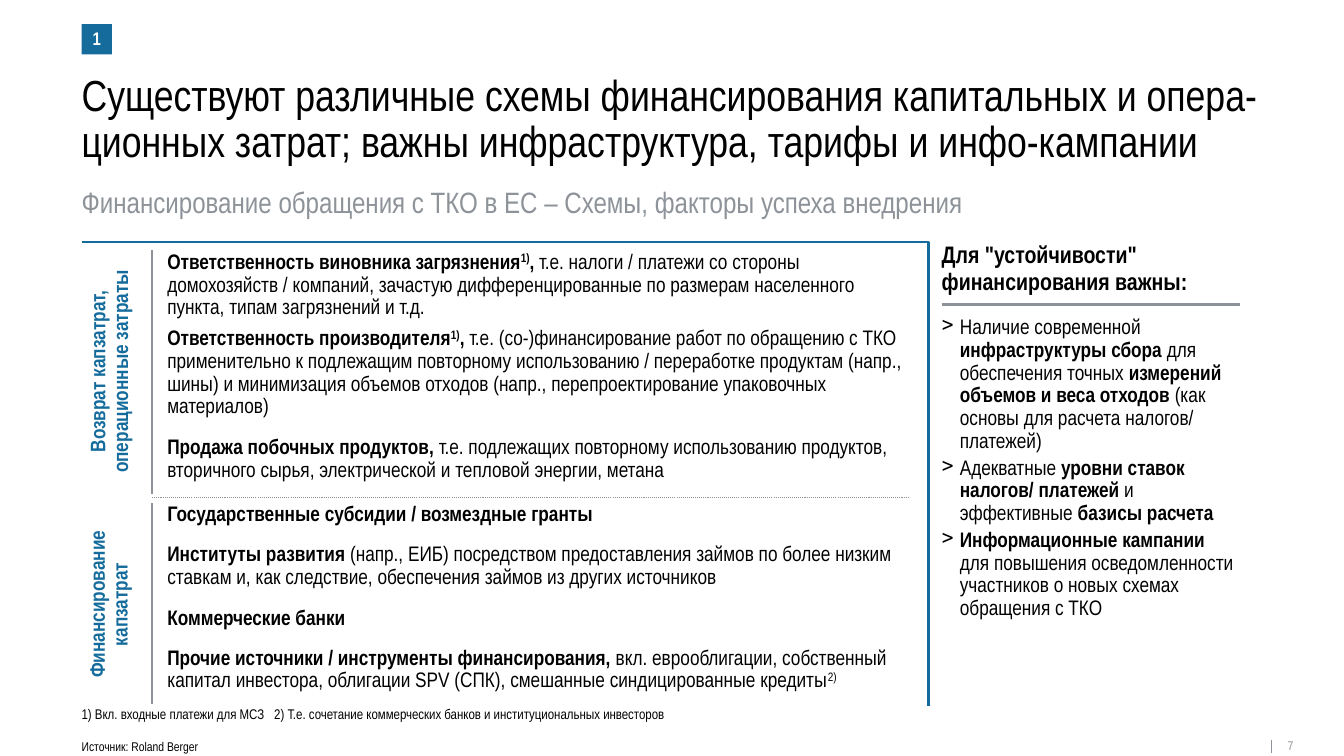
"""Build the slide on financing schemes for municipal waste management."""
from dataclasses import dataclass
from typing import NamedTuple

from lxml import etree
from pptx import Presentation
from pptx.dml.color import RGBColor
from pptx.enum.dml import MSO_LINE
from pptx.enum.shapes import MSO_CONNECTOR, MSO_SHAPE
from pptx.enum.text import MSO_ANCHOR, PP_ALIGN
from pptx.oxml.ns import qn
from pptx.util import Inches, Pt

FONT = "Arial Narrow"
BLACK = RGBColor(0x00, 0x00, 0x00)
WHITE = RGBColor(0xFF, 0xFF, 0xFF)
BLUE = RGBColor(0x15, 0x6C, 0x9C)
GREY = RGBColor(0x8D, 0x93, 0x99)
TOP, MIDDLE, BOTTOM = MSO_ANCHOR.TOP, MSO_ANCHOR.MIDDLE, MSO_ANCHOR.BOTTOM
LEFT, CENTER = PP_ALIGN.LEFT, PP_ALIGN.CENTER
STRAIGHT, RECTANGLE = MSO_CONNECTOR.STRAIGHT, MSO_SHAPE.RECTANGLE
DOTTED = MSO_LINE.ROUND_DOT

MARGIN = 0.81
SCHEME_LEFT, SCHEME_WIDTH = 1.66, 7.4
SIDE_LEFT, SIDE_WIDTH = 9.34, 2.95
BULLET_INDENT = 0.18


class Span(NamedTuple):
    text: str
    bold: bool = False
    raised: bool = False


@dataclass(frozen=True)
class Style:
    size: float
    color: RGBColor = BLACK
    align: PP_ALIGN = LEFT
    anchor: MSO_ANCHOR = TOP
    spacing: float = 0.9
    bullet: str = ""
    tab: float = 0
    wrap: bool = True
    inset_top: float = 0
    inset_bottom: float = 0


@dataclass(frozen=True)
class Label:
    left: float
    top: float
    width: float
    height: float
    style: Style
    paras: list[list[Span]]
    rotation: float = 0


@dataclass(frozen=True)
class Rule:
    start: tuple[float, float]
    end: tuple[float, float]
    width: float = 1.75
    dash: MSO_LINE | None = None


BODY = Style(15, anchor=MIDDLE)
SIDE_HEAD = Style(17, anchor=BOTTOM, spacing=0.93, inset_bottom=0.08)
SIDE_LIST = Style(15, bullet=">", inset_top=0.12)
GROUP = Style(15, BLUE, CENTER)
BADGE = Style(13, WHITE, CENTER, MIDDLE, wrap=False)


def scheme(top: float, height: float, *spans: Span) -> Label:
    """Describe one financing scheme in the main column."""
    return Label(SCHEME_LEFT, top, SCHEME_WIDTH, height, BODY, [list(spans)])


LABELS = [
    Label(MARGIN, 0.73, 11.8, 0.94, Style(31), [[Span(
        "Существуют различные схемы финансирования капитальных и опера-ционных затрат; "
        "важны инфраструктура, тарифы и инфо-кампании")]]),
    Label(MARGIN, 1.87, 11.8, 0.33, Style(21, GREY), [[Span(
        "Финансирование обращения с ТКО в ЕС – Схемы, факторы успеха внедрения")]]),
    scheme(2.48, 0.7,
           Span("Ответственность виновника загрязнения", True), Span("1)", True, True),
           Span(", ", True),
           Span("т.е. налоги / платежи со стороны домохозяйств / компаний, зачастую "
                "дифференцированные по размерам населенного пункта, типам загрязнений и т.д.")),
    scheme(3.23, 0.94,
           Span("Ответственность производителя", True), Span("1)", True, True),
           Span(", ", True),
           Span("т.е. (со-)финансирование работ по обращению с ТКО применительно к подлежащим "
                "повторному использованию / переработке продуктам (напр., шины) и минимизация "
                "объемов отходов (напр., перепроектирование упаковочных материалов)")),
    scheme(4.33, 0.45,
           Span("Продажа побочных продуктов, ", True),
           Span("т.е. подлежащих повторному использованию продуктов, вторичного сырья, "
                "электрической и тепловой энергии, метана")),
    scheme(4.99, 0.23, Span("Государственные субсидии / возмездные гранты", True)),
    scheme(5.39, 0.45,
           Span("Институты развития", True),
           Span(" (напр., ЕИБ) посредством предоставления займов по более низким ставкам и, "
                "как следствие, обеспечения займов из других источников")),
    scheme(6.02, 0.23, Span("Коммерческие банки", True)),
    scheme(6.42, 0.45,
           Span("Прочие источники / инструменты финансирования, ", True),
           Span("вкл. еврооблигации, собственный капитал инвестора, облигации SPV (СПК), "
                "смешанные синдицированные кредиты"),
           Span("2)", raised=True)),
    Label(-0.12, 3.46, 2.42, 0.45, GROUP,
          [[Span("Возврат капзатрат, операционные затраты", True)]], 270),
    Label(0.08, 5.77, 2.01, 0.45, GROUP, [[Span("Финансирование капзатрат", True)]], 270),
    Label(SIDE_LEFT, 2.4, SIDE_WIDTH, 0.61, SIDE_HEAD,
          [[Span('Для "устойчивости" финансирования важны:', True)]]),
    Label(SIDE_LEFT, 3.02, SIDE_WIDTH, 3.16, SIDE_LIST, [
        [Span("Наличие современной "), Span("инфраструктуры сбора ", True),
         Span("для обеспечения точных "), Span("измерений объемов и веса отходов ", True),
         Span("(как основы для расчета налогов/ платежей)")],
        [Span("Адекватные "), Span("уровни ставок налогов/ платежей", True),
         Span(" и эффективные "), Span("базисы расчета", True)],
        [Span("Информационные кампании ", True),
         Span("для повышения осведомленности участников о новых схемах обращения с ТКО")]]),
    Label(MARGIN, 7.02, 6.2, 0.15, Style(10, anchor=BOTTOM, tab=1.91), [[Span(
        "1) Вкл. входные платежи для МСЗ\t"
        "2) Т.е. сочетание коммерческих банков и институциональных инвесторов")]]),
    Label(MARGIN, 7.34, 1.17, 0.14, Style(9, anchor=BOTTOM, wrap=False),
          [[Span("Источник: Roland Berger")]]),
    Label(12.77, 7.34, 0.13, 0.14, Style(9, GREY, wrap=False), [[Span("7")]]),
]

RULES = [
    Rule((1.51, 2.48), (1.51, 4.9)),
    Rule((1.51, 4.99), (1.51, 6.98)),
    Rule((1.51, 4.94), (9.01, 4.94), 0.75, DOTTED),
    Rule((SIDE_LEFT, 3.02), (12.3, 3.02)),
    Rule((12.61, 7.34), (12.61, 7.47), 0.75),
]


def write_text(box, style: Style, paras: list[list[Span]]) -> None:
    """Fill a shape with formatted paragraphs."""
    frame = box.text_frame
    frame.word_wrap = style.wrap
    frame.vertical_anchor = style.anchor
    frame.margin_left = frame.margin_right = 0
    frame.margin_top = Inches(style.inset_top)
    frame.margin_bottom = Inches(style.inset_bottom)
    for index, spans in enumerate(paras):
        para = frame.add_paragraph() if index else frame.paragraphs[0]
        para.alignment = style.align
        para.line_spacing = style.spacing
        para.space_before = Pt(3 if index else 0)
        properties = para._p.get_or_add_pPr()
        if style.bullet:
            properties.set("marL", str(Inches(BULLET_INDENT)))
            properties.set("indent", str(-Inches(BULLET_INDENT)))
            etree.SubElement(properties, qn("a:buChar"), char=style.bullet)
        if style.tab:
            tabs = etree.SubElement(properties, qn("a:tabLst"))
            etree.SubElement(tabs, qn("a:tab"), pos=str(Inches(style.tab)), algn="l")
        for span in spans:
            run = para.add_run()
            run.text = span.text
            run.font.name = FONT
            run.font.size = Pt(style.size)
            run.font.bold = span.bold
            run.font.color.rgb = style.color
            if span.raised:
                run._r.get_or_add_rPr().set("baseline", "30000")


def add_label(page, label: Label) -> None:
    """Add a text box."""
    box = page.shapes.add_textbox(*map(Inches, (label.left, label.top, label.width, label.height)))
    box.rotation = label.rotation
    write_text(box, label.style, label.paras)


def add_rule(page, rule: Rule) -> None:
    """Add a grey straight line."""
    line = page.shapes.add_connector(STRAIGHT, *map(Inches, rule.start + rule.end))
    line.line.color.rgb = GREY
    line.line.width = Pt(rule.width)
    if rule.dash is not None:
        line.line.dash_style = rule.dash
    etree.SubElement(line._element.spPr, qn("a:effectLst"))


def add_frame(page) -> None:
    """Add the blue outline above and to the right of the schemes."""
    builder = page.shapes.build_freeform(Inches(MARGIN), Inches(2.4))
    corners = [(Inches(9.21), Inches(2.4)), (Inches(9.21), Inches(7))]
    builder.add_line_segments(corners, close=False)
    outline = builder.convert_to_shape()
    outline.shadow.inherit = False
    outline.fill.background()
    outline.line.color.rgb = BLUE
    outline.line.width = Pt(1.75)


def add_badge(page) -> None:
    """Add the blue section number."""
    badge = page.shapes.add_shape(RECTANGLE, *map(Inches, (MARGIN, 0.24, 0.3, 0.3)))
    badge.shadow.inherit = False
    badge.fill.solid()
    badge.fill.fore_color.rgb = BLUE
    badge.line.fill.background()
    write_text(badge, BADGE, [[Span("1", True)]])


def main() -> None:
    """Build and save the deck."""
    deck = Presentation()
    deck.slide_width, deck.slide_height = Inches(13.33), Inches(7.5)
    page = deck.slides.add_slide(deck.slide_layouts[6])
    add_frame(page)
    for rule in RULES:
        add_rule(page, rule)
    for label in LABELS:
        add_label(page, label)
    add_badge(page)
    deck.save("out.pptx")


if __name__ == "__main__":
    main()
